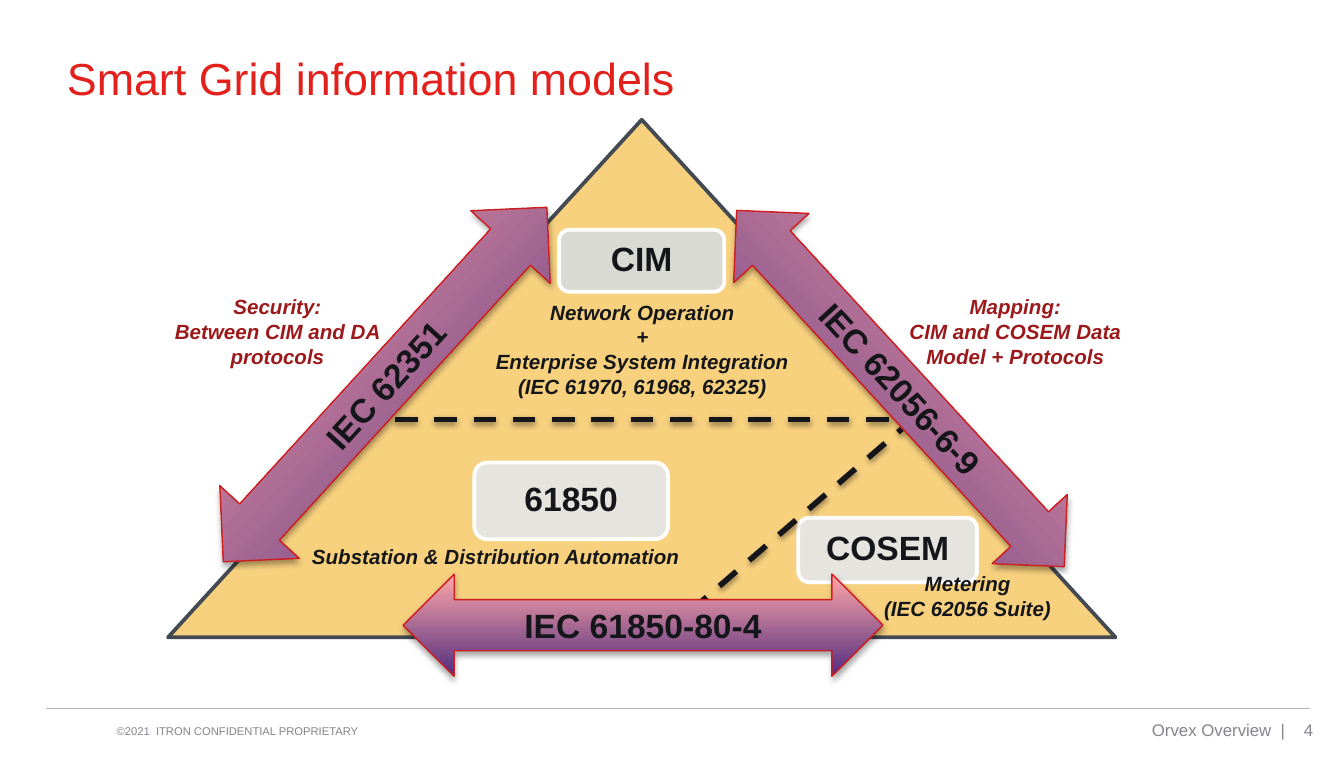
from lxml import etree
from pptx import Presentation
from pptx import util as u
from pptx.dml.color import RGBColor
from pptx.enum import dml, shapes, text
from pptx.oxml import parse_xml
from pptx.oxml.ns import nsdecls, qn

COLORS = {
    "title": "E3211C", "footer": "84848D", "rule": "BAB3BC",
    "triangle": "F8D17F", "edge": "434A52", "ink": "141619",
    "cim": "D7DBDF", "model": "E5E7EA", "white": "FFFFFF",
    "purple": "522D80", "pink": "FFA7A8", "arrow": "D01C1F", "note": "9C191B",
}
COLORS = {name: RGBColor.from_string(value) for name, value in COLORS.items()}
CENTER, RIGHT, LEFT = text.PP_ALIGN.CENTER, text.PP_ALIGN.RIGHT, text.PP_ALIGN.LEFT
MIDDLE, TOP = text.MSO_ANCHOR.MIDDLE, text.MSO_ANCHOR.TOP
CELL = u.Inches(0.1)  # the slide is a grid of 100 columns by 56.3 rows


def write(shape, wording, size, color, align=CENTER, anchor=MIDDLE, bold=False, italic=False):
    frame = shape.text_frame
    frame.text = wording
    frame.word_wrap = True
    frame.vertical_anchor = anchor
    for paragraph in frame.paragraphs:
        paragraph.alignment = align
        for span in paragraph.runs:
            span.font.name = "Arial"
            span.font.size = u.Pt(size)
            span.font.bold = bold
            span.font.italic = italic
            span.font.color.rgb = COLORS[color]


def set_shadow(shape, alpha=0, distance=0):
    """Replace the theme shadow; an alpha of 0 leaves no shadow."""
    properties = shape._element.spPr
    for old in properties.findall(qn("a:effectLst")):
        properties.remove(old)
    shadow = (f'<a:outerShdw blurRad="{u.Pt(3.1)}" dist="{u.Pt(distance)}" dir="5400000" rotWithShape="0">'
              f'<a:srgbClr val="000000"><a:alpha val="{alpha * 1000}"/></a:srgbClr></a:outerShdw>')
    properties.append(parse_xml(
        f'<a:effectLst {nsdecls("a")}>{shadow if alpha else ""}</a:effectLst>'))


deck = Presentation()
deck.slide_width, deck.slide_height = 100 * CELL, int(56.3 * CELL)
page = deck.slides.add_slide(deck.slide_layouts[6])

# Title and footer
for wording, place, size, color, align, anchor in [
    ("4", (94.7, 52.8, 4, 3), 9, "footer", RIGHT, MIDDLE),
    ("©2021  ITRON CONFIDENTIAL PROPRIETARY", (7.7, 53.4, 29.7, 2), 6, "footer", LEFT, TOP),
    ("Smart Grid information models", (4, 3.2, 90, 5.1), 24, "title", LEFT, MIDDLE),
    ("Orvex Overview  |", (79, 52.8, 17.6, 3), 9, "footer", RIGHT, MIDDLE),
]:
    box = page.shapes.add_textbox(*[int(cells * CELL) for cells in place])
    write(box, wording, size, color, align, anchor)

# Triangle and the three model boxes
triangle = page.shapes.add_shape(
    shapes.MSO_SHAPE.ISOSCELES_TRIANGLE, *[int(cells * CELL) for cells in (12.5, 8.9, 70.5, 38.5)])
triangle.fill.solid()
triangle.fill.fore_color.rgb = COLORS["triangle"]
triangle.line.color.rgb = COLORS["edge"]
triangle.line.width = u.Pt(2)
set_shadow(triangle)

for name, place, color in [
    ("CIM", (41.6, 17.1, 12.3, 4.6), "cim"),
    ("61850", (35.3, 34.4, 14.4, 5.7), "model"),
    ("COSEM", (59.4, 38.5, 13.3, 4.8), "model"),
]:
    model = page.shapes.add_shape(
        shapes.MSO_SHAPE.ROUNDED_RECTANGLE, *[int(cells * CELL) for cells in place])
    model.fill.solid()
    model.fill.fore_color.rgb = COLORS[color]
    fill_color = model._element.spPr.find(qn("a:solidFill"))[0]
    etree.SubElement(fill_color, qn("a:alpha"), val="90000")
    model.line.color.rgb = COLORS["white"]
    model.line.width = u.Pt(2)
    set_shadow(model)
    write(model, name, 18, "ink", bold=True)
    model.text_frame.paragraphs[0].line_spacing = 0.9

# Footer rule and dashed dividers
for ends, color, weight, dashed in [
    ((3.4, 52.7, 97.5, 52.7), "rule", 0.5, False),
    ((29.4, 31.2, 66.5, 31.2), "ink", 3, True),
    ((49.1, 47.4, 67.1, 31.9), "ink", 3, True),
]:
    divider = page.shapes.add_connector(
        shapes.MSO_CONNECTOR.STRAIGHT, *[int(cells * CELL) for cells in ends])
    divider.line.color.rgb = COLORS[color]
    divider.line.width = u.Pt(weight)
    if dashed:
        divider.line.dash_style = dml.MSO_LINE.DASH
        set_shadow(divider, 38, 1.6)
    else:
        set_shadow(divider)

# Notes inside and beside the triangle
for wording, place, color in [
    ("Network Operation\n+\nEnterprise System Integration\n(IEC 61970, 61968, 62325)",
     (35, 21.8, 25.6, 8.4), "ink"),
    ("Metering\n(IEC 62056 Suite)", (64.2, 42, 15.6, 4.7), "ink"),
    ("Substation & Distribution Automation", (20.7, 40, 32.4, 2.9), "ink"),
    ("Security:\nBetween CIM and DA protocols", (11, 21.4, 19.3, 6.6), "note"),
    ("Mapping:\nCIM and COSEM Data Model + Protocols", (66.1, 21.4, 18.9, 6.6), "note"),
]:
    note = page.shapes.add_textbox(*[int(cells * CELL) for cells in place])
    write(note, wording, 11, color, anchor=TOP, bold=True, italic=True)

# Standards linking the models, one arrow along each side
for standard, place, rotation in [
    ("IEC 62351", (10.8, 24.6, 35.7, 8), 312.4),
    ("IEC 62056-6-9", (49, 25.1, 36, 7.6), 47.4),
    ("IEC 61850-80-4", (30, 42.7, 35.7, 7.6), 0),
]:
    arrow = page.shapes.add_shape(
        shapes.MSO_SHAPE.LEFT_RIGHT_ARROW, *[int(cells * CELL) for cells in place])
    arrow.rotation = rotation
    arrow.fill.gradient()
    arrow.fill.gradient_angle = 90
    for stop, color, position in zip(arrow.fill.gradient_stops, ("purple", "pink"), (0, 1)):
        stop.color.rgb = COLORS[color]
        stop.position = position
    arrow.line.color.rgb = COLORS["arrow"]
    arrow.line.width = u.Pt(0.75)
    set_shadow(arrow, 35, 1.8)
    write(arrow, standard, 18, "ink", bold=True)

deck.save("out.pptx")
